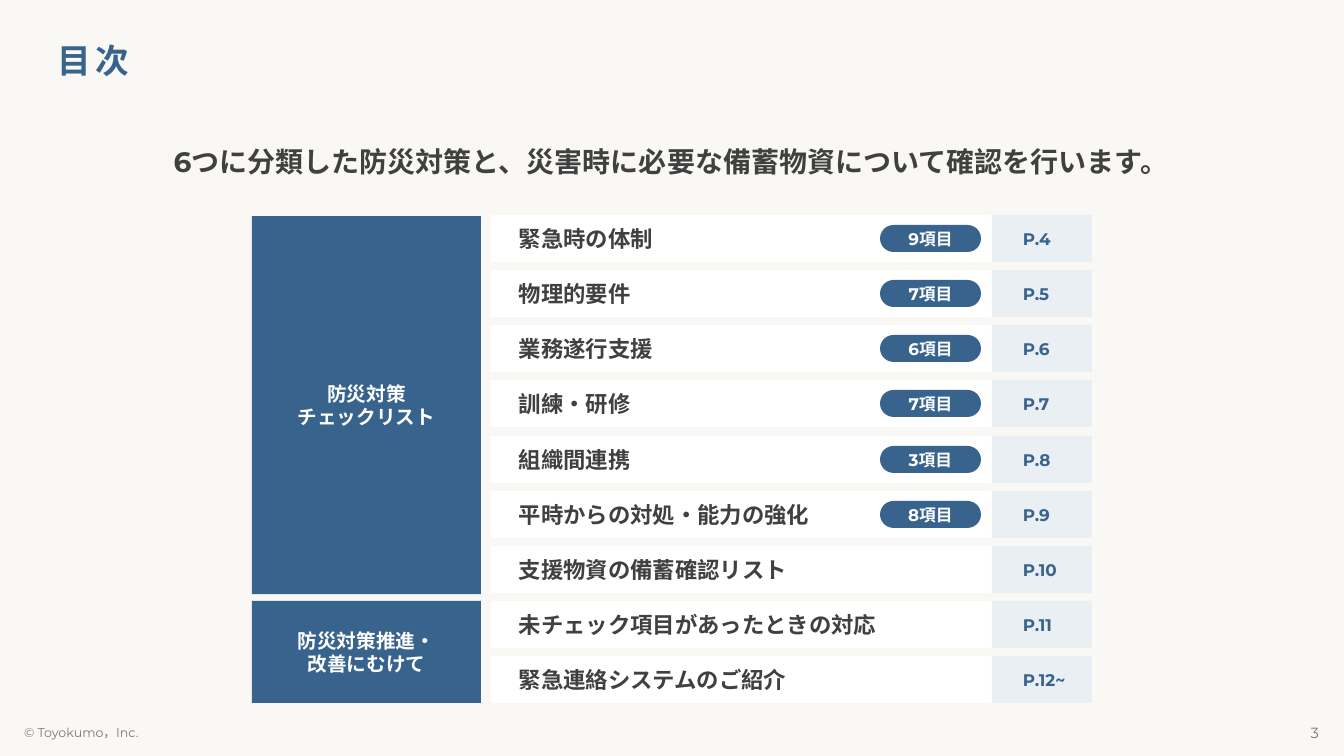
from dataclasses import dataclass

from lxml import etree
from pptx import Presentation
from pptx.dml.color import RGBColor
from pptx.enum.shapes import MSO_SHAPE
from pptx.enum.text import MSO_ANCHOR, PP_ALIGN
from pptx.oxml.ns import qn
from pptx.util import Emu, Pt

ROUNDED = MSO_SHAPE.ROUNDED_RECTANGLE
MIDDLE = MSO_ANCHOR.MIDDLE
LEFT, CENTER, RIGHT = PP_ALIGN.LEFT, PP_ALIGN.CENTER, PP_ALIGN.RIGHT

SLIDE_WIDTH, SLIDE_HEIGHT = 1344, 756
EMU_PER_PX = 12192000 / SLIDE_WIDTH

BLUE, WHITE, DARK, GRAY, CREAM = "37638D", "FFFFFF", "404040", "797979", "FAF8F4"
LATIN_FONT, JAPANESE_FONT = "Montserrat", "Noto Sans CJK JP"

ROW_TOP, LAST_ROW_TOP, ROW_HEIGHT = 215, 656, 47
BADGE_OFFSET = 10


@dataclass(frozen=True)
class Box:
    left: int
    top: int
    width: int
    height: int


@dataclass(frozen=True)
class TextStyle:
    size: float
    color: str
    bold: bool = True
    align: PP_ALIGN = LEFT
    font: str = LATIN_FONT
    insets: tuple[int, int, int, int] = (10, 5, 10, 5)
    spacing: int = 0
    line_spacing: float | None = None


@dataclass(frozen=True)
class Entry:
    title: str
    page: str
    count: str = ""


@dataclass(frozen=True)
class Category:
    text: str
    box: Box


TITLE = TextStyle(24, BLUE, insets=(10, 8, 10, 5), spacing=300, line_spacing=0.9)
LEAD = TextStyle(20, DARK, align=CENTER)
ROW = TextStyle(16, DARK, insets=(28, 5, 10, 5))
PAGE = TextStyle(12, BLUE, insets=(31, 5, 10, 5))
BADGE = TextStyle(12, WHITE, align=CENTER)
CATEGORY = TextStyle(14, WHITE, align=CENTER, font=JAPANESE_FONT)
COPYRIGHT = TextStyle(9, GRAY, bold=False)
PAGE_NUMBER = TextStyle(10.5, GRAY, bold=False, align=RIGHT)

ENTRIES = [
    Entry("緊急時の体制", "P.4", "9項目"),
    Entry("物理的要件", "P.5", "7項目"),
    Entry("業務遂行支援", "P.6", "6項目"),
    Entry("訓練・研修", "P.7", "7項目"),
    Entry("組織間連携", "P.8", "3項目"),
    Entry("平時からの対処・能力の強化", "P.9", "8項目"),
    Entry("支援物資の備蓄確認リスト", "P.10"),
    Entry("未チェック項目があったときの対応", "P.11"),
    Entry("緊急連絡システムのご紹介", "P.12~"),
]

CATEGORIES = [
    Category("防災対策\vチェックリスト", Box(252, 216, 229, 378)),
    Category("防災対策推進・\n改善にむけて", Box(252, 601, 229, 102)),
]


def px(length: int) -> Emu:
    return Emu(round(length * EMU_PER_PX))


def rgb(color: str) -> RGBColor:
    return RGBColor.from_string(color)


def place(box: Box) -> tuple[Emu, Emu, Emu, Emu]:
    return px(box.left), px(box.top), px(box.width), px(box.height)


def write(shape, text: str, style: TextStyle) -> None:
    frame = shape.text_frame
    frame.word_wrap = True
    frame.vertical_anchor = MIDDLE
    (frame.margin_left, frame.margin_top,
     frame.margin_right, frame.margin_bottom) = map(px, style.insets)
    frame.text = text
    for paragraph in frame.paragraphs:
        paragraph.alignment = style.align
        if style.line_spacing:
            paragraph.line_spacing = style.line_spacing
        font = paragraph.font
        font.size = Pt(style.size)
        font.bold = style.bold
        font.name = style.font
        font.color.rgb = rgb(style.color)
        # East Asian typeface and letter spacing
        properties = paragraph._p.pPr.find(qn("a:defRPr"))
        etree.SubElement(properties, qn("a:ea"), typeface=LATIN_FONT)
        if style.spacing:
            properties.set("spc", str(style.spacing))


def add_text(slide, box: Box, text: str, style: TextStyle) -> None:
    write(slide.shapes.add_textbox(*place(box)), text, style)


def add_panel(slide, box: Box, fill: str, text: str, style: TextStyle,
              rounding: float = 0, opacity: int = 100) -> None:
    shape = slide.shapes.add_shape(ROUNDED, *place(box))
    shape.shadow.inherit = False
    shape.adjustments[0] = rounding
    shape.line.fill.background()
    shape.fill.solid()
    shape.fill.fore_color.rgb = rgb(fill)
    if opacity < 100:
        color = shape._element.spPr.find(qn("a:solidFill"))[0]
        etree.SubElement(color, qn("a:alpha"), val=str(opacity * 1000))
    write(shape, text, style)


def add_entry(slide, entry: Entry, top: int) -> None:
    add_panel(slide, Box(491, top, 601, ROW_HEIGHT), WHITE, entry.title, ROW)
    add_panel(slide, Box(992, top, 100, ROW_HEIGHT), BLUE, entry.page, PAGE, opacity=10)
    if entry.count:
        badge = Box(880, top + BADGE_OFFSET, 101, 27)
        add_panel(slide, badge, BLUE, entry.count, BADGE, rounding=0.5)


def main() -> None:
    presentation = Presentation()
    presentation.slide_width = px(SLIDE_WIDTH)
    presentation.slide_height = px(SLIDE_HEIGHT)
    slide = presentation.slides.add_slide(presentation.slide_layouts[6])
    slide.background.fill.solid()
    slide.background.fill.fore_color.rgb = rgb(CREAM)

    # Heading and footer
    add_text(slide, Box(48, 28, 1243, 67), "目次", TITLE)
    add_text(slide, Box(14, 719, 395, 27), "© Toyokumo，Inc.", COPYRIGHT)
    add_text(slide, Box(1027, 719, 302, 27), "3", PAGE_NUMBER)
    add_text(slide, Box(48, 128, 1246, 67),
             "6つに分類した防災対策と、災害時に必要な備蓄物資について確認を行います。", LEAD)

    # Contents rows
    pitch = (LAST_ROW_TOP - ROW_TOP) / (len(ENTRIES) - 1)
    for index, entry in enumerate(ENTRIES):
        add_entry(slide, entry, round(ROW_TOP + index * pitch))

    # Categories beside the rows
    for category in CATEGORIES:
        add_panel(slide, category.box, BLUE, category.text, CATEGORY)

    presentation.save("out.pptx")


if __name__ == "__main__":
    main()
